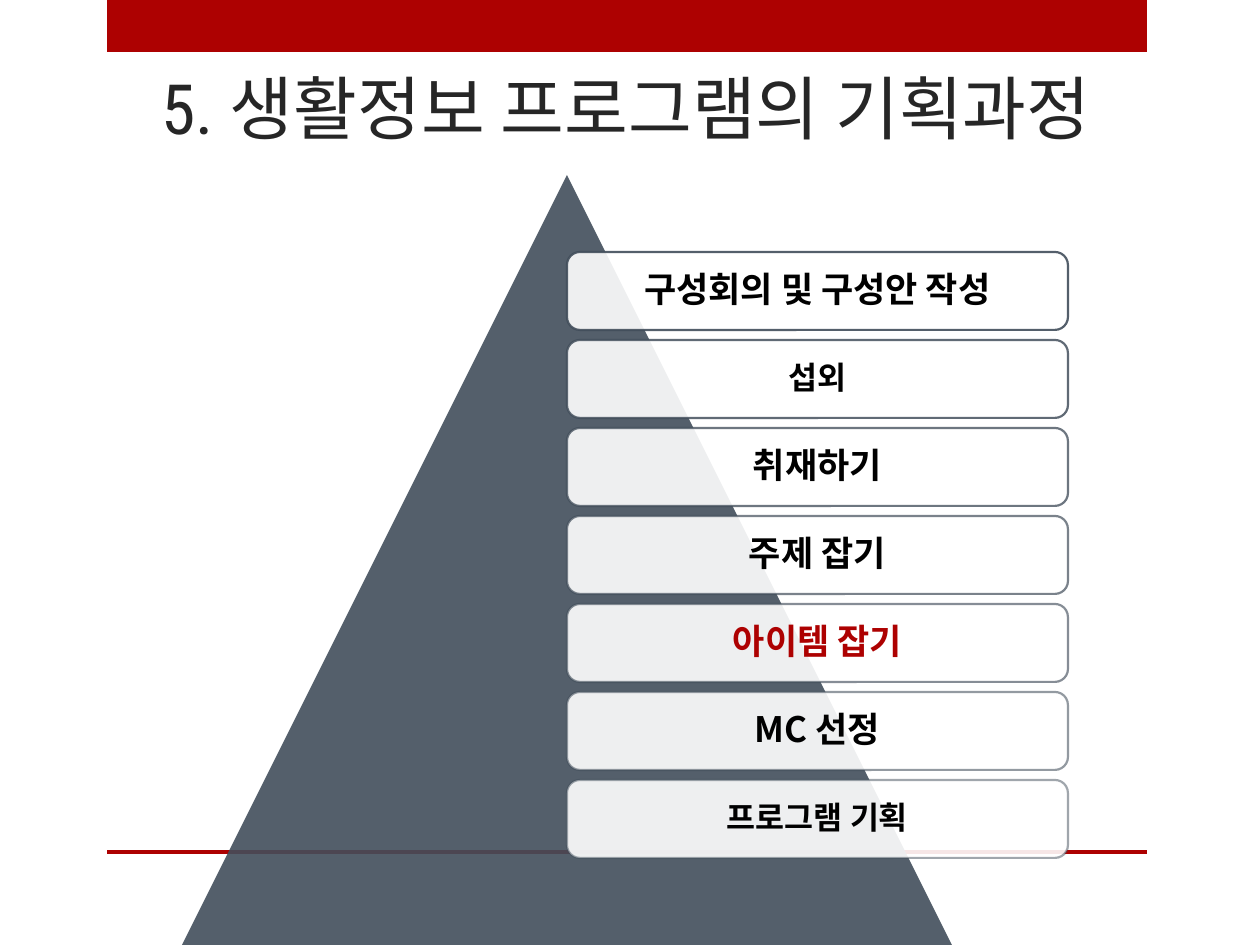
from dataclasses import dataclass

from lxml import etree
from pptx import Presentation
from pptx.dml.color import RGBColor
from pptx.enum.shapes import MSO_SHAPE
from pptx.enum.text import MSO_ANCHOR, MSO_AUTO_SIZE, PP_ALIGN
from pptx.oxml.ns import qn
from pptx.util import Emu, Pt

RECTANGLE = MSO_SHAPE.RECTANGLE
TRIANGLE = MSO_SHAPE.ISOSCELES_TRIANGLE
ROUNDED = MSO_SHAPE.ROUNDED_RECTANGLE
CENTER = PP_ALIGN.CENTER
MIDDLE = MSO_ANCHOR.MIDDLE
BOTTOM = MSO_ANCHOR.BOTTOM
NO_AUTOFIT = MSO_AUTO_SIZE.NONE

EMU_PER_PX = 914400 / 126
TITLE_ONLY_LAYOUT = 5


@dataclass(frozen=True)
class Theme:
    red: str = "AD0101"
    slate: str = "424E5B"
    white: str = "FFFFFF"
    black: str = "000000"
    title_color: str = "262626"
    title_font: str = "Roboto Condensed"
    body_font: str = "Noto Sans CJK KR"
    title_size: float = 39.6
    step_size: int = 20
    small_step_size: int = 18
    outline_width: float = 1.25


THEME = Theme()

# Top to bottom: label, type size, colour
STEPS = [
    ("구성회의 및 구성안 작성", THEME.step_size, THEME.black),
    ("섭외", THEME.small_step_size, THEME.black),
    ("취재하기", THEME.step_size, THEME.black),
    ("주제 잡기", THEME.step_size, THEME.black),
    ("아이템 잡기", THEME.step_size, THEME.red),
    ("MC 선정", THEME.step_size, THEME.black),
    ("프로그램 기획", THEME.small_step_size, THEME.black),
]
STEP_LEFT, STEP_TOP, STEP_WIDTH, STEP_HEIGHT = 567, 252, 501, 78
STEP_PITCH = 88
FIRST_OUTLINE_OPACITY, LAST_OUTLINE_OPACITY = 90, 50


def px(length):
    return Emu(round(length * EMU_PER_PX))


def set_solid(fill, color, opacity=100):
    """Give a fill one colour, with its opacity in percent."""
    fill.solid()
    fill.fore_color.rgb = RGBColor.from_string(color)
    if opacity < 100:
        color_element = fill._xPr.find(qn("a:solidFill"))[0]
        alpha = etree.SubElement(color_element, qn("a:alpha"))
        alpha.set("val", str(round(opacity * 1000)))


def format_text(text_frame, font_name, size, color, bold=False):
    """Centre the first paragraph and set its font for all scripts."""
    paragraph = text_frame.paragraphs[0]
    paragraph.alignment = CENTER
    for run in paragraph.runs:
        font = run.font
        font.size = Pt(size)
        font.bold = bold
        font.color.rgb = RGBColor.from_string(color)
        font.name = font_name
        east_asian = etree.SubElement(font._element, qn("a:ea"))
        east_asian.set("typeface", font_name)


def add_filled_shape(slide, kind, left, top, width, height, color, opacity=100):
    shape = slide.shapes.add_shape(kind, px(left), px(top), px(width), px(height))
    shape.shadow.inherit = False
    set_solid(shape.fill, color, opacity)
    shape.line.fill.background()
    return shape


def add_title(slide, text):
    title = slide.shapes.title
    title.left, title.top, title.width, title.height = map(px, (106, 53, 1041, 102))
    text_frame = title.text_frame
    text_frame.text = text
    text_frame.auto_size = NO_AUTOFIT
    text_frame.vertical_anchor = BOTTOM
    format_text(text_frame, THEME.title_font, THEME.title_size, THEME.title_color)


def add_step(slide, top, label, size, color, outline_opacity):
    box = add_filled_shape(
        slide, ROUNDED, STEP_LEFT, top, STEP_WIDTH, STEP_HEIGHT, THEME.white, 90
    )
    box.line.width = Pt(THEME.outline_width)
    set_solid(box.line.fill, THEME.slate, outline_opacity)
    text_frame = box.text_frame
    text_frame.text = label
    text_frame.word_wrap = True
    text_frame.vertical_anchor = MIDDLE
    text_frame.paragraphs[0].line_spacing = 0.9
    format_text(text_frame, THEME.body_font, size, color, bold=True)


def add_steps(slide):
    """Stack the steps at an equal pitch, with outlines fading downwards."""
    fade = (FIRST_OUTLINE_OPACITY - LAST_OUTLINE_OPACITY) / (len(STEPS) - 1)
    for index, (label, size, color) in enumerate(STEPS):
        top = STEP_TOP + index * STEP_PITCH
        add_step(slide, top, label, size, color, FIRST_OUTLINE_OPACITY - index * fade)


def main():
    presentation = Presentation()
    presentation.slide_width = px(1260)
    presentation.slide_height = px(945)
    layout = presentation.slide_layouts[TITLE_ONLY_LAYOUT]
    slide = presentation.slides.add_slide(layout)

    add_title(slide, "5. 생활정보 프로그램의 기획과정")
    add_filled_shape(slide, RECTANGLE, 107, 0, 1040, 52, THEME.red)
    add_filled_shape(slide, RECTANGLE, 107, 850, 1040, 4, THEME.red)
    add_filled_shape(slide, TRIANGLE, 182, 175, 770, 770, THEME.slate, 90)
    add_steps(slide)

    presentation.save("out.pptx")


if __name__ == "__main__":
    main()
